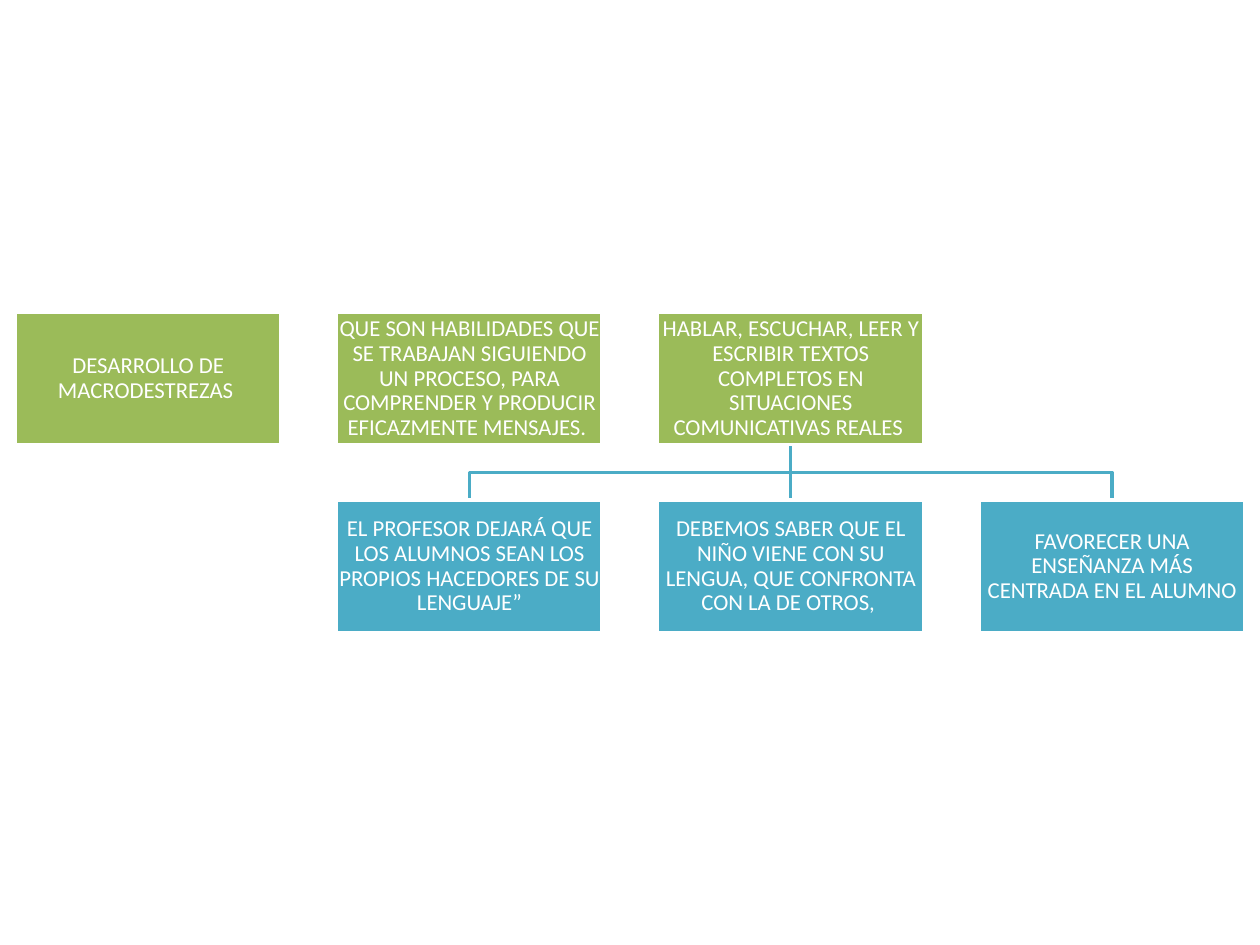
from lxml import etree
from pptx import Presentation
from pptx import util as u
from pptx.dml.color import RGBColor
from pptx.enum import shapes, text
from pptx.oxml.ns import qn

GREEN = RGBColor(0x9B, 0xBB, 0x59)
TEAL = RGBColor(0x4B, 0xAC, 0xC6)
WHITE = RGBColor(0xFF, 0xFF, 0xFF)

BOX_WIDTH, BOX_HEIGHT = 2.11, 1.05
FIRST_LEFT, COLUMN_STEP = 0.12, 2.55
TOP_ROW, BOTTOM_ROW = 2.48, 3.97

# Each entry: column, wording
SKILLS = [
    (0, "DESARROLLO DE MACRODESTREZAS "),
    (1, "QUE SON HABILIDADES QUE SE TRABAJAN SIGUIENDO UN PROCESO, "
        "PARA COMPRENDER Y PRODUCIR EFICAZMENTE MENSAJES. "),
    (2, "HABLAR, ESCUCHAR, LEER Y ESCRIBIR TEXTOS COMPLETOS EN "
        "SITUACIONES COMUNICATIVAS REALES "),
]
PRINCIPLES = [
    (1, "EL PROFESOR DEJARÁ QUE LOS ALUMNOS SEAN LOS PROPIOS HACEDORES "
        "DE SU LENGUAJE”"),
    (2, "DEBEMOS SABER QUE EL NIÑO VIENE CON SU LENGUA, QUE CONFRONTA "
        "CON LA DE OTROS, "),
    (3, "FAVORECER UNA ENSEÑANZA MÁS CENTRADA EN EL ALUMNO"),
]
PARENT_COLUMN = 2


def column_left(column):
    return FIRST_LEFT + column * COLUMN_STEP


def column_center(column):
    return column_left(column) + BOX_WIDTH / 2


def write_text(shape, wording, *, size=13, color=WHITE, font="Calibri", margin=0.01):
    frame = shape.text_frame
    frame.word_wrap = True
    frame.vertical_anchor = text.MSO_ANCHOR.MIDDLE
    frame.margin_left = frame.margin_right = u.Inches(margin)
    frame.margin_top = frame.margin_bottom = u.Inches(margin)
    paragraph = frame.paragraphs[0]
    paragraph.alignment = text.PP_ALIGN.CENTER
    paragraph.line_spacing = 0.9
    run = paragraph.add_run()
    run.text = wording
    run.font.size = u.Pt(size)
    run.font.name = font
    run.font.color.rgb = color


class Chart:
    """Draws the organization chart on one slide."""

    def __init__(self, slide, line_width=2):
        self.slide = slide
        self.line_width = u.Pt(line_width)

    def outline(self, shape, color):
        shape.line.color.rgb = color
        shape.line.width = self.line_width

    def box(self, column, top, wording, fill):
        shape = self.slide.shapes.add_shape(
            shapes.MSO_SHAPE.RECTANGLE, u.Inches(column_left(column)),
            u.Inches(top), u.Inches(BOX_WIDTH), u.Inches(BOX_HEIGHT))
        shape.shadow.inherit = False
        shape.fill.solid()
        shape.fill.fore_color.rgb = fill
        self.outline(shape, WHITE)
        write_text(shape, wording)

    def straight_link(self, x, top, bottom):
        link = self.slide.shapes.add_connector(
            shapes.MSO_CONNECTOR.STRAIGHT, u.Inches(x), u.Inches(top),
            u.Inches(x), u.Inches(bottom))
        etree.SubElement(link._element.spPr, qn("a:effectLst"))
        self.outline(link, TEAL)

    def elbow_link(self, start_x, end_x, top, bottom):
        middle = (top + bottom) / 2
        points = [(start_x, middle), (end_x, middle), (end_x, bottom)]
        builder = self.slide.shapes.build_freeform(
            u.Inches(start_x), u.Inches(top))
        builder.add_line_segments(
            [(u.Inches(x), u.Inches(y)) for x, y in points], close=False)
        link = builder.convert_to_shape()
        link.shadow.inherit = False
        link.fill.background()
        self.outline(link, TEAL)

    def link(self, parent, child):
        start_x, end_x = column_center(parent), column_center(child)
        top, bottom = TOP_ROW + BOX_HEIGHT, BOTTOM_ROW
        if parent == child:
            self.straight_link(start_x, top, bottom)
        else:
            self.elbow_link(start_x, end_x, top, bottom)


def main():
    presentation = Presentation()
    presentation.slide_width = u.Inches(10)
    presentation.slide_height = u.Inches(7.5)
    chart = Chart(presentation.slides.add_slide(presentation.slide_layouts[6]))

    for column, _ in reversed(PRINCIPLES):
        chart.link(PARENT_COLUMN, column)
    for entries, top, fill in ((SKILLS, TOP_ROW, GREEN),
                               (PRINCIPLES, BOTTOM_ROW, TEAL)):
        for column, wording in entries:
            chart.box(column, top, wording, fill)

    presentation.save("out.pptx")


if __name__ == "__main__":
    main()
